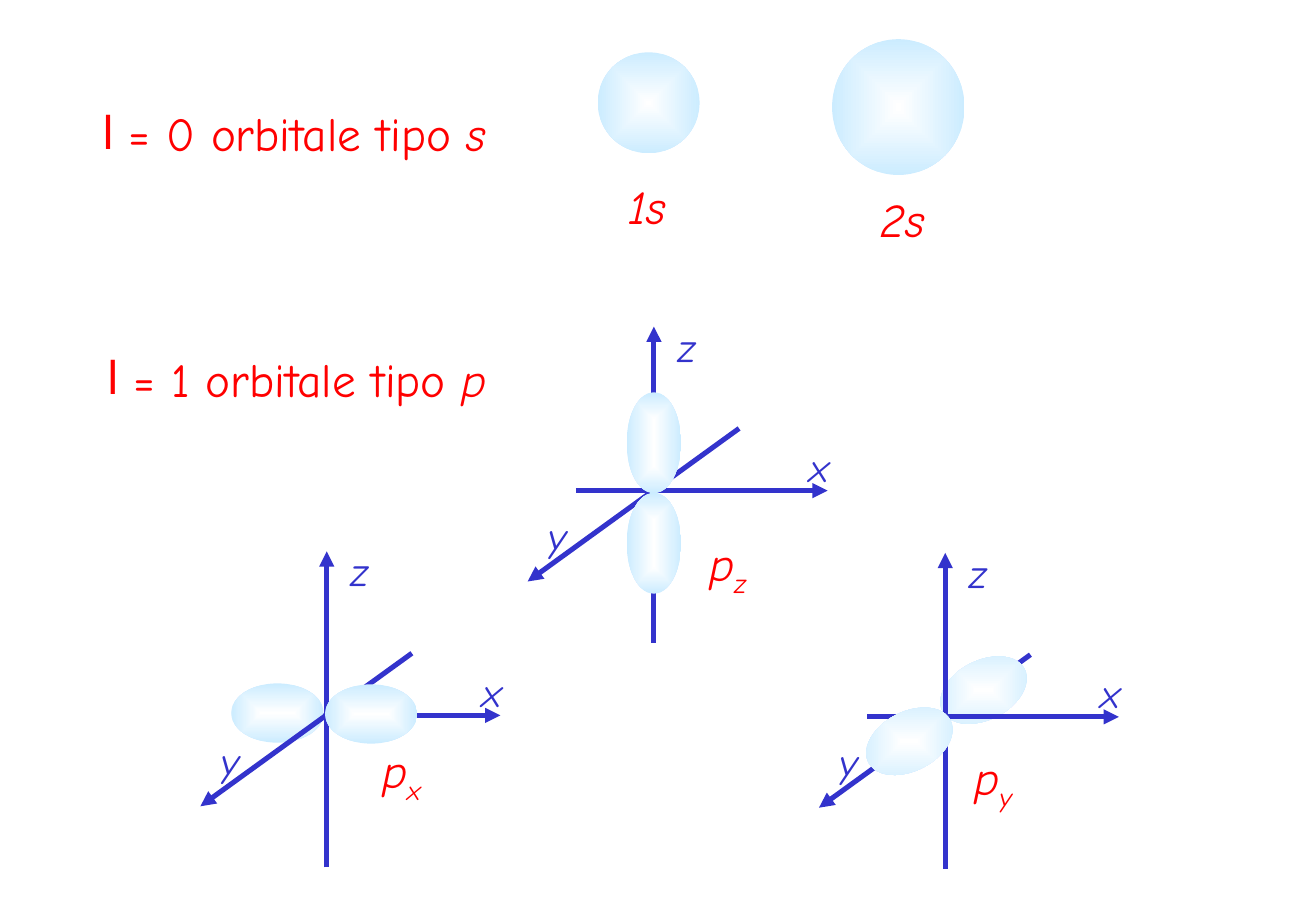
from lxml import etree
from pptx import Presentation
from pptx.dml.color import RGBColor
from pptx.enum.shapes import MSO_CONNECTOR, MSO_SHAPE
from pptx.enum.text import MSO_AUTO_SIZE
from pptx.oxml.ns import qn
from pptx.util import Cm, Pt

LINE = MSO_CONNECTOR.STRAIGHT
OVAL = MSO_SHAPE.OVAL
FIT = MSO_AUTO_SIZE.SHAPE_TO_FIT_TEXT

RED, BLUE = "FF0000", "3333CC"
BIG = {"name": "Comic Neue", "size": Pt(28)}
SMALL = {"name": "Comic Neue", "size": Pt(24), "italic": True}

# Axis ends and name boxes, measured from the origin in cm
AXES = {
    "z": ((0, 3.18), (0, -3.43), (0.26, -3.66, 0.97)),
    "x": ((-1.63, 0), (3.63, 0), (3.0, -1.14, 1.02)),
    "y": ((1.78, -1.3), (-2.64, 1.9), (-2.46, 0.3, 0.97)),
}

# Name, origin, drawing order, lobe size, turn, lobe centres, label place
PLOTS = [
    ("z", (13.67, 10.26), "yzxab", (1.14, 2.11), 0,
     {"a": (0, 1.1), "b": (0, -1.0)}, (0.91, 0.79)),
    ("x", (6.83, 14.96), "zxayb", (1.24, 1.93), 270,
     {"a": (-1.03, -0.05), "b": (0.93, -0.03)}, (0.91, 0.41)),
    ("y", (19.76, 14.99), "yazxb", (1.24, 1.93), 242.8,
     {"a": (0.8, -0.56), "b": (-0.75, 0.51)}, (0.36, 0.53)),
]


def rgb(code):
    return RGBColor.from_string(code)


def add(root, tag, **attrs):
    return etree.SubElement(root, qn(tag), attrs)


class Board:
    def __init__(self, slide):
        self.shapes = slide.shapes

    def text(self, x, y, w, h, runs, style, color, wrap=False, mark=None):
        """Each run is a pair: its words and its own format values."""
        box = self.shapes.add_textbox(Cm(x), Cm(y), Cm(w), Cm(h))
        frame = box.text_frame
        frame.word_wrap = wrap
        frame.auto_size = FIT
        para = frame.paragraphs[0]
        if mark:
            props = para._p.get_or_add_pPr()
            add(props, "a:buFont", typeface="Arial")
            add(props, "a:buChar", char=mark)
        for words, extra in runs:
            run = para.add_run()
            run.text = words
            for key, value in {**style, **extra}.items():
                if key == "base":
                    run._r.get_or_add_rPr().set("baseline", value)
                else:
                    setattr(run.font, key, value)
            run.font.color.rgb = rgb(color)

    def cloud(self, x, y, w, h, turn=0):
        """Oval around the centre x, y, white inside and pale blue outside."""
        oval = self.shapes.add_shape(
            OVAL, Cm(x - w / 2), Cm(y - h / 2), Cm(w), Cm(h))
        oval.rotation = turn
        oval.shadow.inherit = False
        oval.line.fill.background()
        oval.fill.gradient()
        for stop, code, place in zip(
                oval.fill.gradient_stops, ("FFFFFF", "CCECFF"), (0, 1)):
            stop.color.rgb = rgb(code)
            stop.position = place
        grad = oval._element.spPr.find(qn("a:gradFill"))
        grad.remove(grad.find(qn("a:lin")))
        shade = add(grad, "a:path", path="shape")
        add(shade, "a:fillToRect", l="50000", t="50000", r="50000", b="50000")

    def arrow(self, x1, y1, x2, y2):
        line = self.shapes.add_connector(LINE, Cm(x1), Cm(y1), Cm(x2), Cm(y2))
        line.line.color.rgb = rgb(BLUE)
        line.line.width = Pt(3)
        add(line.line._get_or_add_ln(), "a:tailEnd", type="triangle")
        add(line._element.spPr, "a:effectLst")

    def axis(self, name, ox, oy):
        (x1, y1), (x2, y2), (tx, ty, w) = AXES[name]
        self.arrow(ox + x1, oy + y1, ox + x2, oy + y2)
        self.text(ox + tx, oy + ty, w, 1.27, [(name, {})], SMALL, BLUE)

    def plot(self, name, origin, order, size, turn, lobes, label):
        ox, oy = origin
        for part in order:
            if part in lobes:
                dx, dy = lobes[part]
                self.cloud(ox + dx, oy + dy, *size, turn)
            else:
                self.axis(part, ox, oy)
        runs = [("p", {}), (name, {"base": "-25000"})]
        self.text(ox + label[0], oy + label[1], 1.68, 1.45, runs,
                  {**BIG, "italic": True}, RED, wrap=True)


def main():
    deck = Presentation()
    deck.slide_width, deck.slide_height = Cm(27.51), Cm(19.05)
    board = Board(deck.slides.add_slide(deck.slide_layouts[6]))

    # Headings
    for x, y, num, kind in ((1.9, 2.06, 0, "s"), (2.0, 7.19, 1, "p")):
        runs = [(f" = {num} orbitale tipo ", {}), (kind, {"italic": True})]
        board.text(x, y, 9.73, 1.45, runs, BIG, RED, wrap=True, mark="l")

    # Round s orbitals with their names
    for name, x, y, w, h, tx, ty, tw in (
            ("1s", 13.56, 2.15, 2.13, 2.11, 12.88, 3.58, 1.45),
            ("2s", 18.78, 2.24, 2.77, 2.84, 18.16, 3.86, 1.6)):
        board.cloud(x, y, w, h)
        board.text(tx, ty, tw, 1.45, [(name, {"italic": True})], BIG, RED)

    # The three p orbitals on their axes
    for plot in PLOTS:
        board.plot(*plot)

    deck.save("out.pptx")


if __name__ == "__main__":
    main()
